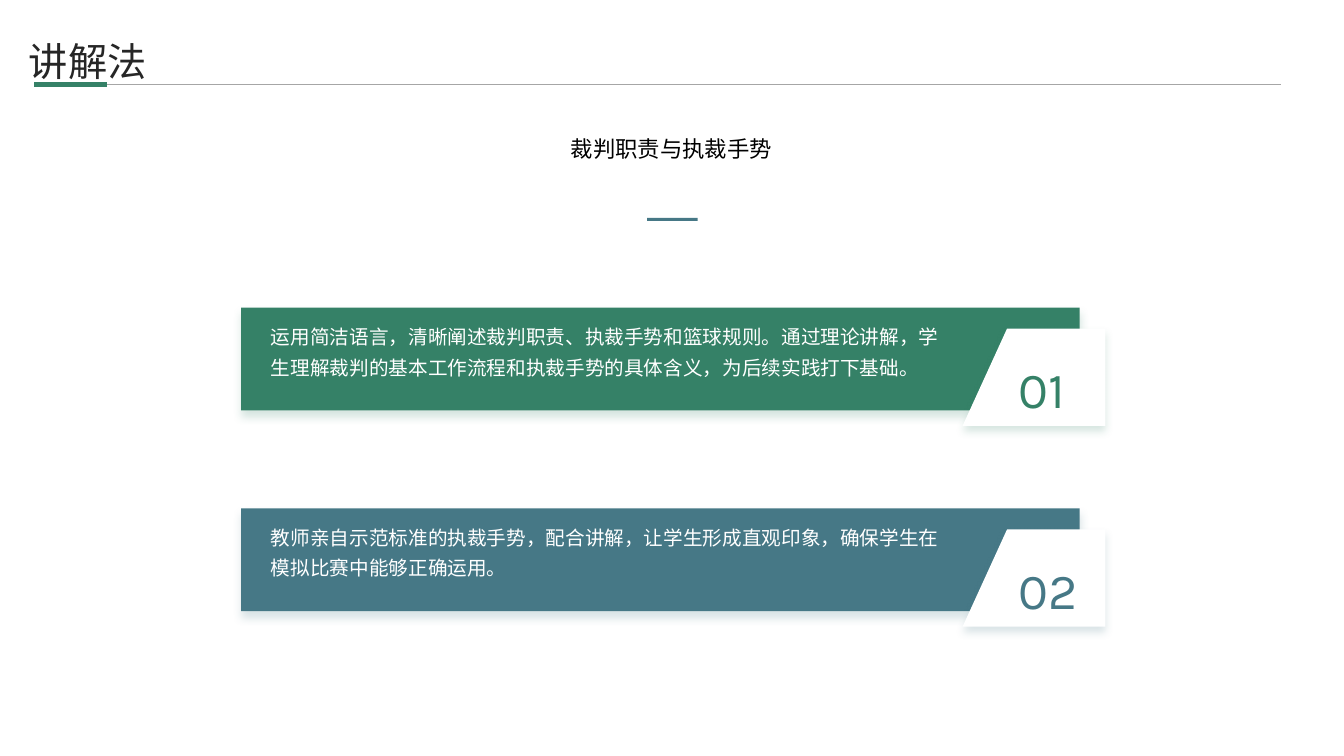
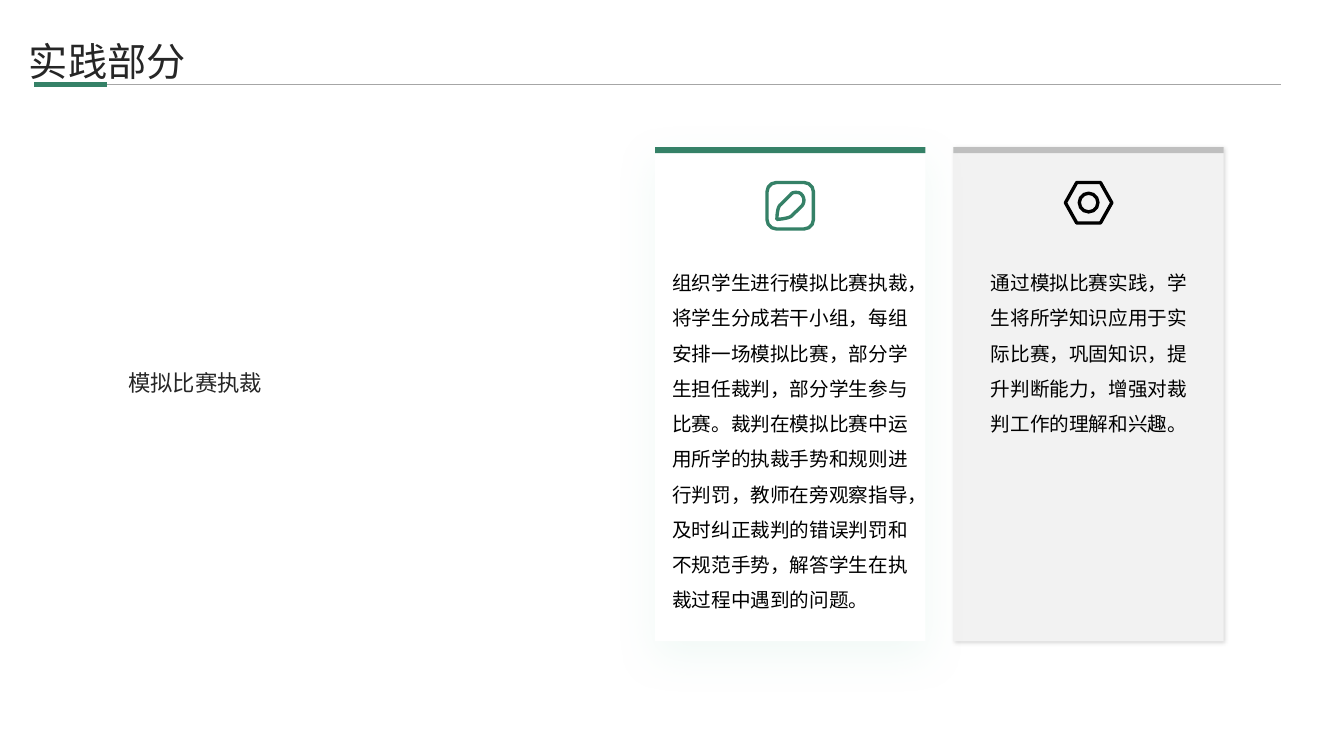
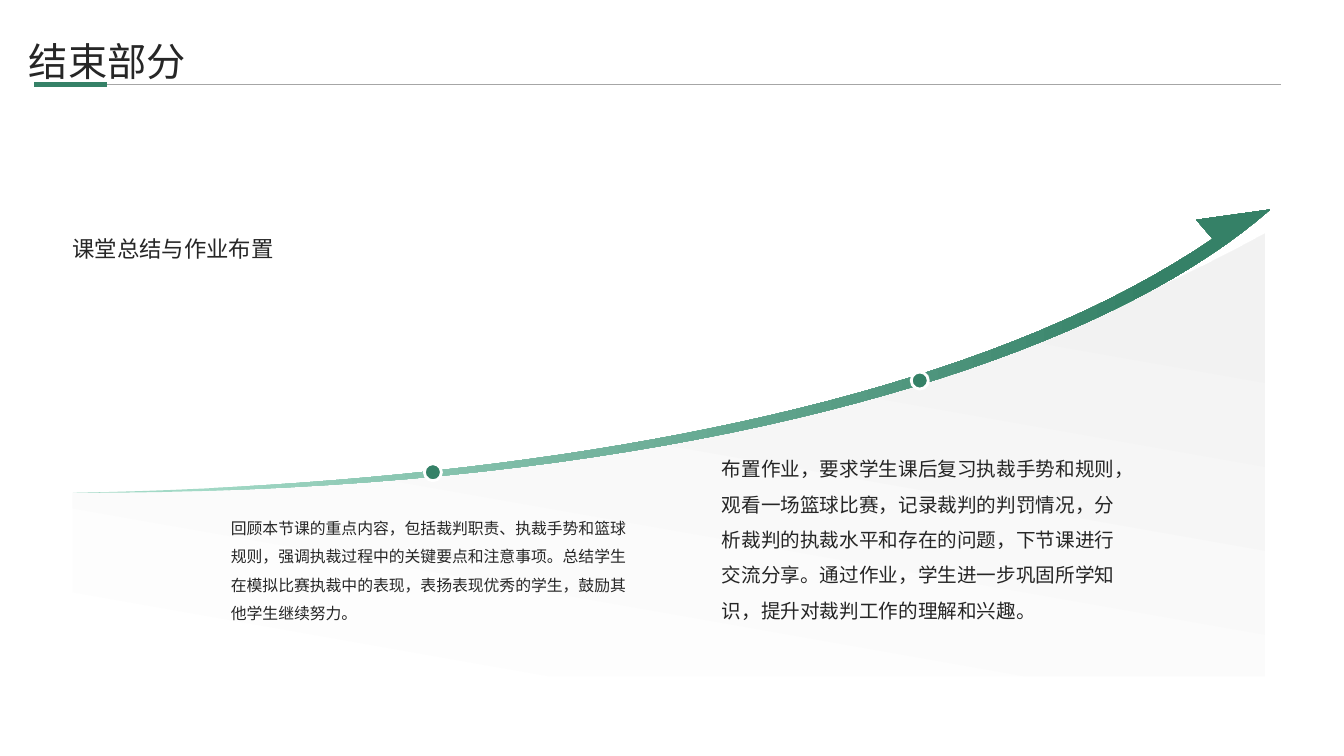
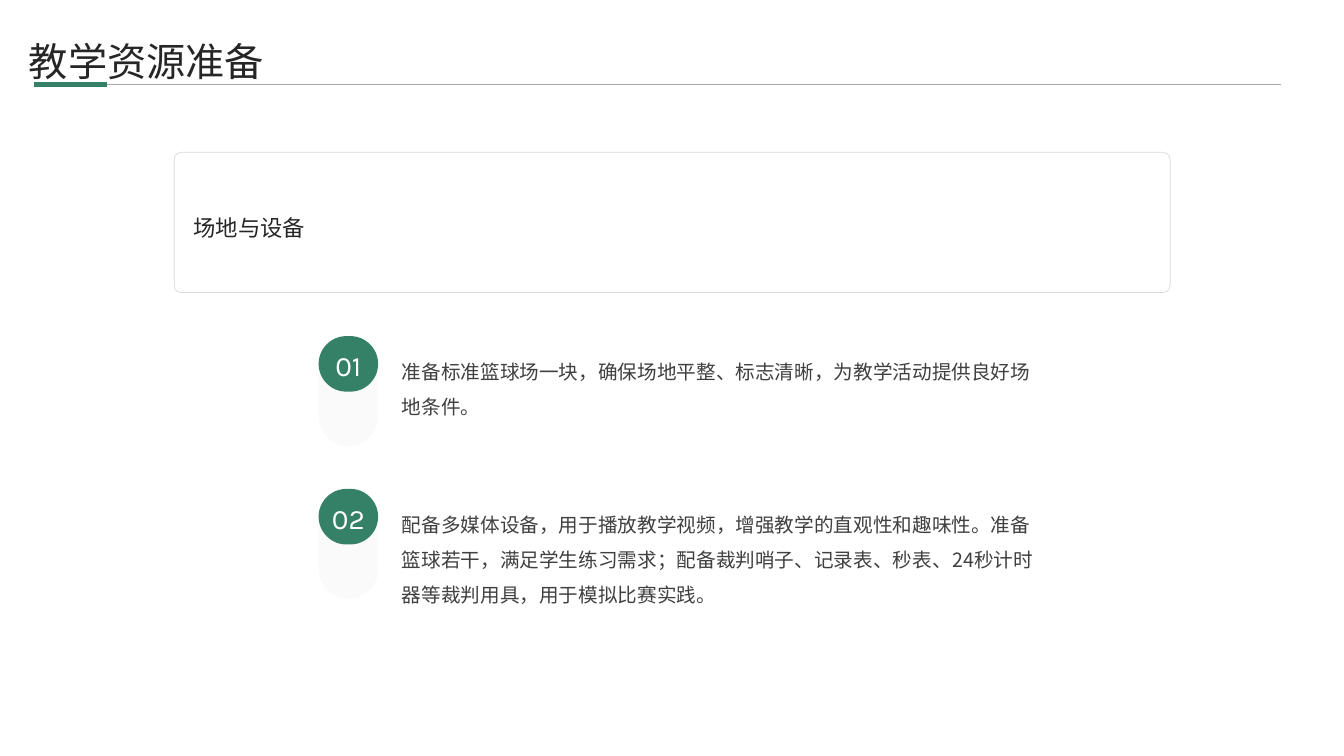
from lxml.etree import SubElement
from pptx import Presentation
from pptx.dml.color import RGBColor
from pptx.enum.shapes import MSO_CONNECTOR, MSO_SHAPE
from pptx.enum.text import MSO_ANCHOR, MSO_AUTO_SIZE, PP_ALIGN
from pptx.oxml.ns import qn
from pptx.util import Cm, Pt

GREEN, BLUE, MINT = "358167", "467886", "A2D9C6"
WHITE, BLACK, INK, GRAPHITE = "FFFFFF", "000000", "262626", "404040"
PALE, SILVER, RULE_GREY = "F2F2F2", "BFBFBF", "A6A6A6"
BODY_FONT, NUMBER_FONT = "Noto Sans CJK SC", "Karla"
DEFAULT_INSETS = (0.25, 0.13)
NO_INSETS = (0, 0)
CURVE_STEPS = 40


def colour(value):
    return RGBColor.from_string(value)


def lengths(*values):
    return [Cm(value) for value in values]


def write(shape, text, size, text_colour, font=BODY_FONT, spacing=1.5,
          align=PP_ALIGN.LEFT, anchor=MSO_ANCHOR.TOP, insets=NO_INSETS, wrap=True):
    frame = shape.text_frame
    frame.word_wrap = wrap
    frame.auto_size = MSO_AUTO_SIZE.NONE
    frame.vertical_anchor = anchor
    frame.margin_left = frame.margin_right = Cm(insets[0])
    frame.margin_top = frame.margin_bottom = Cm(insets[1])
    paragraph = frame.paragraphs[0]
    paragraph.alignment = align
    paragraph.line_spacing = spacing
    run = paragraph.add_run()
    run.text = text
    run.font.size = Pt(size)
    run.font.color.rgb = colour(text_colour)
    run.font.name = font
    SubElement(run.font._element, qn("a:ea"), typeface=font)


def add_text(slide, box, text, size, text_colour, **style):
    write(slide.shapes.add_textbox(*lengths(*box)), text, size, text_colour, **style)


def paint(shape, fill=None, line=None, line_width=1.0):
    shape.shadow.inherit = False
    if fill:
        shape.fill.solid()
        shape.fill.fore_color.rgb = colour(fill)
    else:
        shape.fill.background()
    if line:
        shape.line.color.rgb = colour(line)
        shape.line.width = Pt(line_width)
    else:
        shape.line.fill.background()


def add_shape(slide, kind, box, fill=None, line=None, line_width=1.0):
    shape = slide.shapes.add_shape(kind, *lengths(*box))
    paint(shape, fill, line, line_width)
    return shape


def add_alpha(parent, percent):
    SubElement(parent, qn("a:alpha"), val=str(percent * 1000))


def cast_shadow(shape, shadow_colour, opacity, blur, distance, angle):
    effects = shape._element.spPr.find(qn("a:effectLst"))
    shadow = SubElement(effects, qn("a:outerShdw"), blurRad=str(Pt(blur)),
                        dist=str(Pt(distance)), dir=str(angle * 60000),
                        algn="ctr", rotWithShape="0")
    add_alpha(SubElement(shadow, qn("a:srgbClr"), val=shadow_colour), opacity)


def cubic(start, first, second, end):
    """Points along a Bezier curve, without its start."""
    for step in range(1, CURVE_STEPS + 1):
        t = step / CURVE_STEPS
        u = 1 - t
        yield tuple(u**3 * a + 3 * u * u * t * b + 3 * u * t * t * c + t**3 * d
                    for a, b, c, d in zip(start, first, second, end))


def add_outline(slide, origin, start, segments):
    """Closed outline; a segment is one point (straight) or three (curve)."""
    points = [start]
    for segment in segments:
        points.extend(cubic(points[-1], *segment) if len(segment) == 3 else segment)
    (first_x, first_y), *others = [lengths(*point) for point in points]
    builder = slide.shapes.build_freeform(first_x, first_y)
    builder.add_line_segments(others, close=True)
    shape = builder.convert_to_shape(*lengths(*origin))
    paint(shape)
    return shape


def fill_gradient(shape, angle, *stops):
    shape.fill.gradient()
    shape.fill.gradient_angle = angle
    for stop, (position, value) in zip(shape.fill.gradient_stops, stops):
        stop.position = position
        stop.color.rgb = colour(value)


def add_rule(slide, left, right, top, line_colour, width):
    rule = slide.shapes.add_connector(MSO_CONNECTOR.STRAIGHT, *lengths(left, top, right, top))
    rule.line.color.rgb = colour(line_colour)
    rule.line.width = Pt(width)
    SubElement(rule._element.spPr, qn("a:effectLst"))


def add_titled_slide(presentation, text):
    slide = presentation.slides.add_slide(presentation.slide_layouts[5])
    title = slide.shapes.title
    title.left, title.top, title.width, title.height = lengths(0.48, 0.69, 31.78, 1.35)
    write(title, text, 28, INK, spacing=1.1, insets=DEFAULT_INSETS)
    add_rule(slide, 0.86, 32.28, 2.13, RULE_GREY, 0.5)
    add_rule(slide, 0.86, 2.69, 2.13, GREEN, 3.5)
    return slide


def add_numbered_bar(slide, box, number, text, accent):
    left, top, width, _ = box
    shadow = (accent, 20, 6, 4, 90)
    cast_shadow(add_shape(slide, MSO_SHAPE.RECTANGLE, box, accent), *shadow)
    add_text(slide, (left + 0.5, top + 0.13, 17.7, 2.31), text, 14, WHITE,
             spacing=1.3, insets=DEFAULT_INSETS)
    tab_left = left + width - 2.95
    tab = add_outline(slide, (tab_left, top + 0.53), (1.12, 0),
                      [[(3.6, 0)], [(3.6, 2.45)], [(0, 2.45)]])
    paint(tab, WHITE)
    cast_shadow(tab, *shadow)
    add_text(slide, (tab_left + 1.17, top + 0.99, 2.3, 1.68), number, 36, accent,
             font=NUMBER_FONT, spacing=1.1, insets=DEFAULT_INSETS)


def add_pen_icon(slide, left, top):
    add_shape(slide, MSO_SHAPE.ROUNDED_RECTANGLE, (left + 0.04, top + 0.04, 1.17, 1.17),
              line=GREEN, line_width=2.4).adjustments[0] = 0.2
    pen = add_outline(slide, (left, top), (0.76, 0.29), [
        [(0.83, 0.29), (0.88, 0.3), (0.91, 0.34)],
        [(0.99, 0.42), (0.99, 0.56), (0.91, 0.64)],
        [(0.66, 0.88)],
        [(0.6, 0.95), (0.29, 0.97), (0.29, 0.97)],
        [(0.29, 0.97), (0.29, 0.66), (0.38, 0.6)],
        [(0.64, 0.34)],
        [(0.67, 0.3), (0.71, 0.29), (0.76, 0.29)],
    ])
    paint(pen, line=GREEN, line_width=2.4)


def add_nut_icon(slide, left, top):
    nut = add_shape(slide, MSO_SHAPE.HEXAGON, (left + 0.04, top + 0.04, 1.17, 1.02),
                    line=BLACK, line_width=2.4)
    nut.adjustments[0] = 0.28
    add_shape(slide, MSO_SHAPE.OVAL, (left + 0.39, top + 0.31, 0.47, 0.47),
              line=BLACK, line_width=2.4)


def add_practice_card(slide, box, fill, band, shadow, add_icon, text, text_inset, text_width):
    left, top, width, _ = box
    cast_shadow(add_shape(slide, MSO_SHAPE.RECTANGLE, box, fill), *shadow)
    add_shape(slide, MSO_SHAPE.RECTANGLE, (left, top, width, 0.15), band)
    add_icon(slide, left + (width - 1.25) / 2, top + 0.85)
    add_text(slide, (left + text_inset, top + 2.82, text_width, 8.8), text, 14, BLACK)


def add_growth_arrow(slide, left, top):
    area = add_outline(slide, (left, top), (0, 7.14), [
        [(0, 11.76)], [(30.05, 11.76)], [(30.05, 0.61)],
        [(20.47, 5.87), (9.12, 7.14), (0, 7.14)],
    ])
    fill_gradient(area, 80, (0, WHITE), (0.9, PALE))
    arrow = add_outline(slide, (left, top), (30.18, 0), [
        [(25.65, 3.99), (14.91, 7.17), (0, 7.14)],
        [(11.1, 6.94), (22.33, 5.11), (28.73, 0.74)],
        [(28.32, 0.26)],
    ])
    fill_gradient(arrow, 0, (0.1, MINT), (0.9, GREEN))


def add_milestone(slide, centre_x, centre_y, text_box, text, size):
    diameter = 0.43
    add_shape(slide, MSO_SHAPE.OVAL,
              (centre_x - diameter / 2, centre_y - diameter / 2, diameter, diameter),
              GREEN, WHITE, 2)
    add_text(slide, text_box, text, size, INK)


def add_resource_item(slide, left, top, number, text):
    pill = add_shape(slide, MSO_SHAPE.ROUNDED_RECTANGLE, (left, top, 1.5, 2.77), "E8E8E8")
    add_alpha(pill._element.spPr.find(qn("a:solidFill"))[0], 20)
    badge = add_shape(slide, MSO_SHAPE.ROUNDED_RECTANGLE, (left, top, 1.5, 1.4), GREEN)
    for shape in (pill, badge):
        shape.adjustments[0] = 0.5
    write(badge, number, 20, WHITE, font=NUMBER_FONT, spacing=1.1,
          align=PP_ALIGN.CENTER, anchor=MSO_ANCHOR.MIDDLE, wrap=False)
    add_text(slide, (left + 1.8, top, 16.94, 2.92), text, 14, GRAPHITE, insets=(0.3, 0.3))


def build_explanation(presentation):
    slide = add_titled_slide(presentation, "讲解法")
    add_text(slide, (1.83, 3.07, 30.18, 1), "裁判职责与执裁手势", 16, BLACK,
             spacing=1.3, align=PP_ALIGN.CENTER, insets=DEFAULT_INSETS)
    add_shape(slide, MSO_SHAPE.RECTANGLE, (16.31, 5.49, 1.27, 0.08), BLUE)
    bars = [
        ("01", "运用简洁语言，清晰阐述裁判职责、执裁手势和篮球规则。通过理论讲解，学生理解裁判的基本工作流程和执裁手势的具体含义，为后续实践打下基础。", GREEN),
        ("02", "教师亲自示范标准的执裁手势，配合讲解，让学生形成直观印象，确保学生在模拟比赛中能够正确运用。", BLUE),
    ]
    for index, bar in enumerate(bars):
        add_numbered_bar(slide, (6.08, 7.75 + 5.06 * index, 21.13, 2.59), *bar)


def build_practice(presentation):
    slide = add_titled_slide(presentation, "实践部分")
    add_text(slide, (3.23, 3.84, 12.14, 11.28), "模拟比赛执裁", 16, INK,
             anchor=MSO_ANCHOR.MIDDLE)
    add_practice_card(
        slide, (24.03, 3.71, 6.81, 12.45), PALE, SILVER, (BLACK, 15, 3, 1, 45), add_nut_icon,
        "通过模拟比赛实践，学生将所学知识应用于实际比赛，巩固知识，提升判断能力，增强对裁判工作的理解和兴趣。",
        0.94, 5.26)
    add_practice_card(
        slide, (16.51, 3.71, 6.81, 12.45), WHITE, GREEN, (MINT, 15, 30, 10, 90), add_pen_icon,
        "组织学生进行模拟比赛执裁，将学生分成若干小组，每组安排一场模拟比赛，部分学生担任裁判，部分学生参与比赛。裁判在模拟比赛中运用所学的执裁手势和规则进行判罚，教师在旁观察指导，及时纠正裁判的错误判罚和不规范手势，解答学生在执裁过程中遇到的问题。",
        0.43, 5.97)


def build_closing(presentation):
    slide = add_titled_slide(presentation, "结束部分")
    left, top = 1.83, 5.28
    add_growth_arrow(slide, left, top)
    add_text(slide, (left, top - 1.8, 22.33, 5.21), "课堂总结与作业布置", 16, INK,
             anchor=MSO_ANCHOR.MIDDLE)
    add_milestone(
        slide, left + 9.08, top + 6.62, (left + 3.99, top + 7.55, 10.16, 3.25),
        "回顾本节课的重点内容，包括裁判职责、执裁手势和篮球规则，强调执裁过程中的关键要点和注意事项。总结学生在模拟比赛执裁中的表现，表扬表现优秀的学生，鼓励其他学生继续努力。",
        11.3)
    add_milestone(
        slide, left + 21.35, top + 4.31, (left + 16.36, top + 5.95, 9.98, 4.83),
        "布置作业，要求学生课后复习执裁手势和规则，观看一场篮球比赛，记录裁判的判罚情况，分析裁判的执裁水平和存在的问题，下节课进行交流分享。通过作业，学生进一步巩固所学知识，提升对裁判工作的理解和兴趣。",
        14)


def build_resources(presentation):
    slide = add_titled_slide(presentation, "教学资源准备")
    left, top, width, height = 4.39, 3.84, 25.1, 3.53
    frame = add_shape(slide, MSO_SHAPE.ROUNDED_RECTANGLE, (left, top, width, height),
                      WHITE, "D9D9D9", 0.5)
    frame.adjustments[0] = 0.05
    add_text(slide, (left + 0.49, top, width - 0.98, height), "场地与设备", 16, INK,
             spacing=1.4, anchor=MSO_ANCHOR.MIDDLE)
    items = [
        ("01", "准备标准篮球场一块，确保场地平整、标志清晰，为教学活动提供良好场地条件。"),
        ("02", "配备多媒体设备，用于播放教学视频，增强教学的直观性和趣味性。准备篮球若干，满足学生练习需求；配备裁判哨子、记录表、秒表、24秒计时器等裁判用具，用于模拟比赛实践。"),
    ]
    for index, item in enumerate(items):
        add_resource_item(slide, 8.03, 8.47 + 3.85 * index, *item)


def main():
    presentation = Presentation()
    presentation.slide_width, presentation.slide_height = lengths(33.87, 19.05)
    for build in (build_explanation, build_practice, build_closing, build_resources):
        build(presentation)
    presentation.save("out.pptx")


if __name__ == "__main__":
    main()
